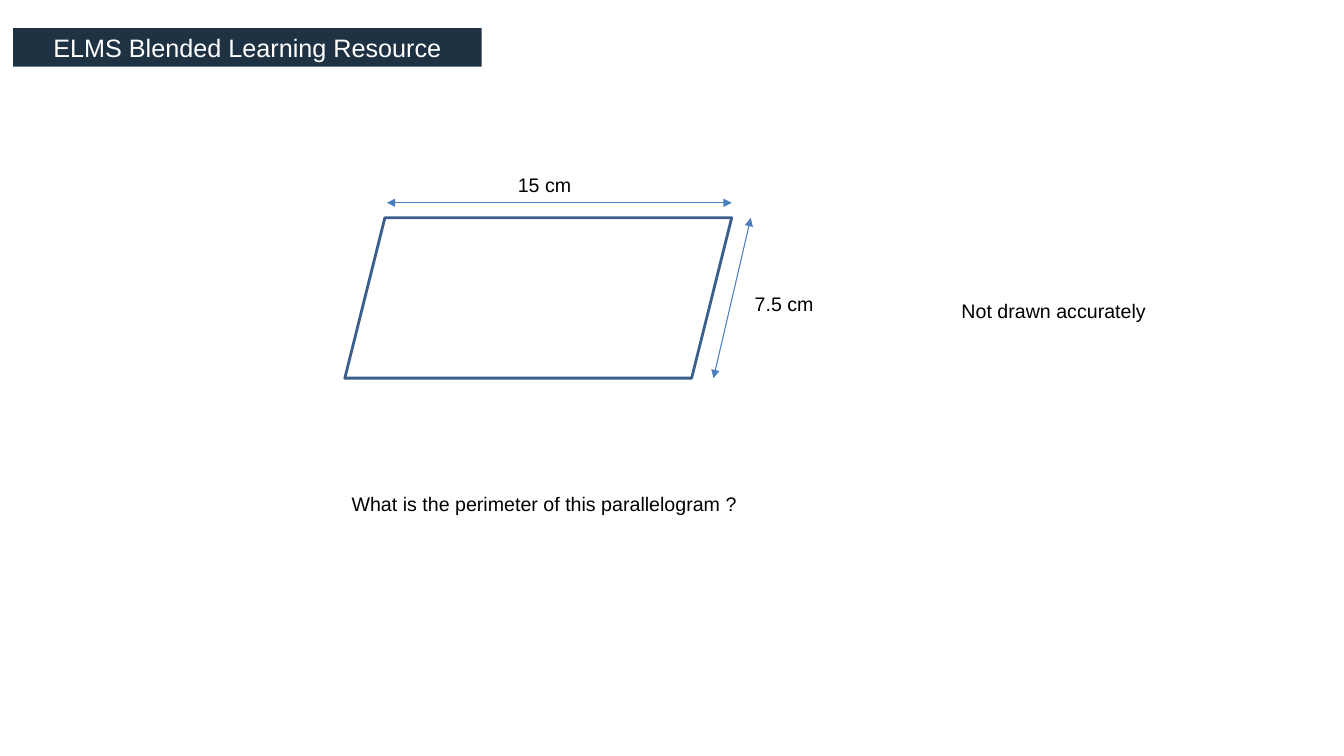
from lxml import etree
from pptx import Presentation
from pptx.dml.color import RGBColor
from pptx.enum.shapes import MSO_CONNECTOR, MSO_SHAPE
from pptx.enum.text import MSO_ANCHOR, MSO_AUTO_SIZE, PP_ALIGN
from pptx.oxml.ns import qn
from pptx.util import Cm, Pt

RECT = MSO_SHAPE.RECTANGLE
SLANT = MSO_SHAPE.PARALLELOGRAM
STRAIGHT = MSO_CONNECTOR.STRAIGHT
MIDDLE = MSO_ANCHOR.MIDDLE
FIT = MSO_AUTO_SIZE.SHAPE_TO_FIT_TEXT
CENTER = PP_ALIGN.CENTER

NAVY = RGBColor(0x1F, 0x32, 0x44)
EDGE = RGBColor(0x3A, 0x5F, 0x8C)
BLUE = RGBColor(0x4B, 0x7E, 0xBC)
WHITE = RGBColor(0xFF, 0xFF, 0xFF)
BLACK = RGBColor(0, 0, 0)

# Text, box in cm, wrap
LABELS = [
    ("15 cm", (12.8, 4.24, 1.85, 0.86), False),
    ("7.5 cm", (18.77, 7.24, 2.64, 0.86), True),
    ("What is the perimeter of this parallelogram ?",
     (8.61, 12.27, 10.26, 0.86), False),
    ("Not drawn accurately", (23.98, 7.42, 5.18, 0.86), False),
]

# Start x, start y, end x, end y in cm
ARROWS = [(9.75, 5.11, 18.44, 5.11), (17.98, 9.53, 18.92, 5.49)]


def assign(target, values):
    for name, value in values.items():
        setattr(target, name, value)


def write(frame, text, size, color):
    para = frame.paragraphs[0]
    run = para.add_run()
    run.text = text
    assign(run.font, {"name": "Arial", "size": Pt(size)})
    run.font.color.rgb = color
    return para


def add_block(slide, kind, box, fill):
    shape = slide.shapes.add_shape(kind, *map(Cm, box))
    shape.shadow.inherit = False
    shape.fill.solid()
    shape.fill.fore_color.rgb = fill
    return shape


def add_banner(slide, text):
    banner = add_block(slide, RECT, (0.33, 0.71, 11.81, 0.97), NAVY)
    banner.line.fill.background()
    assign(banner.text_frame, {"margin_top": 0, "margin_bottom": 0,
                               "vertical_anchor": MIDDLE})
    write(banner.text_frame, text, 18, WHITE).alignment = CENTER


def add_figure(slide):
    figure = add_block(slide, SLANT, (8.69, 5.49, 9.75, 4.04), WHITE)
    figure.line.color.rgb = EDGE
    figure.line.width = Pt(2)


def add_label(slide, text, box, wrap):
    frame = slide.shapes.add_textbox(*map(Cm, box)).text_frame
    assign(frame, {"word_wrap": wrap, "auto_size": FIT})
    write(frame, text, 14, BLACK)


def add_arrow(slide, ends):
    arrow = slide.shapes.add_connector(STRAIGHT, *map(Cm, ends))
    arrow.line.color.rgb = BLUE
    arrow.line.width = Pt(0.75)
    line = arrow.line._get_or_add_ln()
    for tag in ("a:headEnd", "a:tailEnd"):
        etree.SubElement(line, qn(tag), type="triangle")
    etree.SubElement(arrow._element.spPr, qn("a:effectLst"))


def main():
    deck = Presentation()
    assign(deck, {"slide_width": Cm(33.87), "slide_height": Cm(19.05)})
    slide = deck.slides.add_slide(deck.slide_layouts[6])

    # Heading
    add_banner(slide, "ELMS Blended Learning Resource")

    # Parallelogram with its dimensions
    add_figure(slide)
    for ends in ARROWS:
        add_arrow(slide, ends)

    # Measures, question and remark
    for text, box, wrap in LABELS:
        add_label(slide, text, box, wrap)

    deck.save("out.pptx")


if __name__ == "__main__":
    main()
